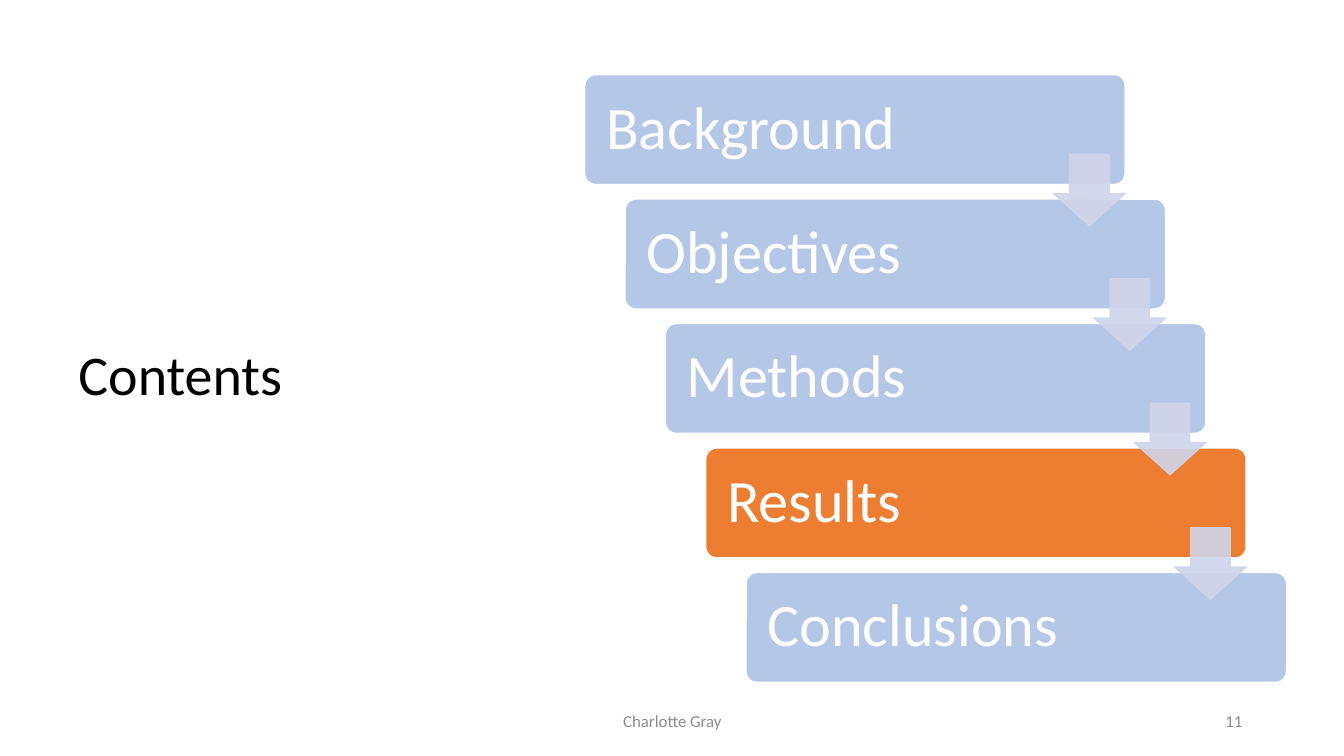
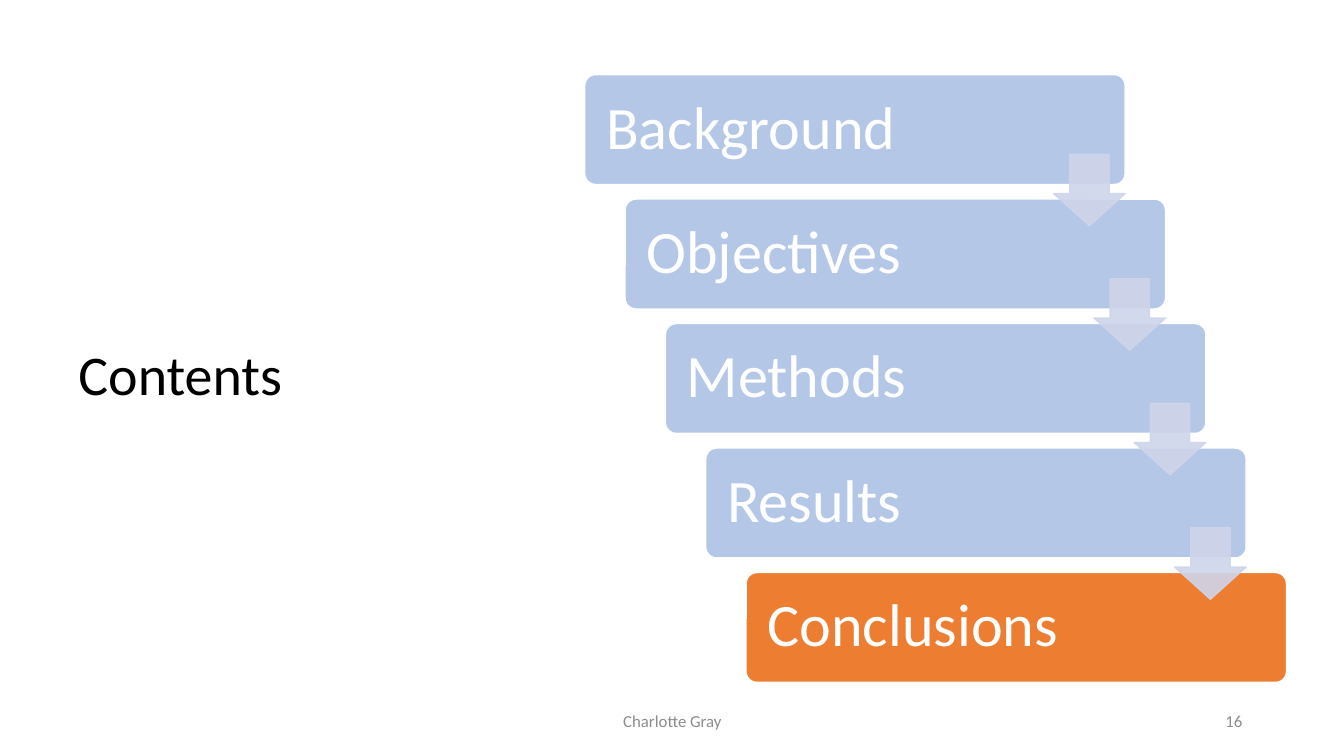
from dataclasses import dataclass

from lxml.etree import SubElement
from pptx import Presentation
from pptx.dml.color import RGBColor
from pptx.enum.shapes import MSO_SHAPE
from pptx.enum.text import MSO_ANCHOR, PP_ALIGN
from pptx.oxml.ns import qn
from pptx.util import Inches, Pt

STEPS = ["Background", "Objectives", "Methods", "Results", "Conclusions"]
SLIDES = [
    {"active": "Results", "number": "11"},
    {"active": "Conclusions", "number": "16"},
]
TITLE = "Contents"
FOOTER = "Charlotte Gray"


@dataclass(frozen=True)
class Theme:
    font: str = "Calibri"
    title: str = "000000"
    step: str = "B4C7E7"
    active: str = "ED7D31"
    arrow: str = "CFD5EA"
    white: str = "FFFFFF"
    footer: str = "8C8C8C"
    title_size: int = 40
    step_size: int = 43
    footer_size: int = 12
    arrow_alpha: int = 90


THEME = Theme()
SLIDE_W, SLIDE_H = 13.33, 7.5
TITLE_BOX = (0.68, 1.27, 3.94, 4.95)
FOOTER_BOX = (4.42, 6.95, 4.5, 0.4)
NUMBER_BOX = (9.42, 6.95, 3, 0.4)
STAIR_LEFT, STAIR_TOP, STAIR_BOTTOM = 5.8, 0.74, 6.77
STEP_W, STEP_H, STEP_INDENT = 5.36, 1.09, 0.4
STEP_INSET = 0.18
ARROW_SIZE, ARROW_DROP = 0.71, 0.79


def write(shape, text, size, color, align=PP_ALIGN.LEFT, spacing=1.0):
    tf = shape.text_frame
    tf.word_wrap = True
    tf.vertical_anchor = MSO_ANCHOR.MIDDLE
    tf.text = text
    p = tf.paragraphs[0]
    p.alignment = align
    p.line_spacing = spacing
    font = p.runs[0].font
    font.name = THEME.font
    font.size = Pt(size)
    font.color.rgb = RGBColor.from_string(color)


def add_text(s, box, *args, **kwargs):
    write(s.shapes.add_textbox(*map(Inches, box)), *args, **kwargs)


def add_block(group, kind, box, adjustments, fill, line):
    sp = group.shapes.add_shape(kind, *map(Inches, box))
    sp.shadow.inherit = False
    for i, value in enumerate(adjustments):
        sp.adjustments[i] = value
    sp.fill.solid()
    sp.fill.fore_color.rgb = RGBColor.from_string(fill)
    sp.line.color.rgb = RGBColor.from_string(line)
    sp.line.width = Pt(1)
    return sp


def add_step(group, text, left, top, fill):
    sp = add_block(group, MSO_SHAPE.ROUNDED_RECTANGLE, (left, top, STEP_W, STEP_H),
                   [0.1], fill, THEME.white)
    tf = sp.text_frame
    tf.margin_left = tf.margin_right = Inches(STEP_INSET)
    tf.margin_top = tf.margin_bottom = Inches(STEP_INSET)
    write(sp, text, THEME.step_size, THEME.white, spacing=0.9)


def add_arrow(group, left, top):
    sp = add_block(group, MSO_SHAPE.DOWN_ARROW, (left, top, ARROW_SIZE, ARROW_SIZE),
                   [0.55, 0.45], THEME.arrow, THEME.arrow)
    for color in sp._element.spPr.iter(qn("a:srgbClr")):
        SubElement(color, qn("a:alpha")).set("val", str(THEME.arrow_alpha * 1000))


def add_staircase(s, active):
    group = s.shapes.add_group_shape()
    pitch = (STAIR_BOTTOM - STAIR_TOP - STEP_H) / (len(STEPS) - 1)
    corners = [(STAIR_LEFT + i * STEP_INDENT, STAIR_TOP + i * pitch)
               for i in range(len(STEPS))]
    for text, (left, top) in zip(STEPS, corners):
        add_step(group, text, left, top, THEME.active if text == active else THEME.step)
    for left, top in corners[:-1]:
        add_arrow(group, left + STEP_W - ARROW_SIZE, top + ARROW_DROP)


def add_contents_slide(prs, active, number):
    s = prs.slides.add_slide(prs.slide_layouts[6])
    add_text(s, TITLE_BOX, TITLE, THEME.title_size, THEME.title, spacing=0.9)
    add_staircase(s, active)
    add_text(s, FOOTER_BOX, FOOTER, THEME.footer_size, THEME.footer, PP_ALIGN.CENTER)
    add_text(s, NUMBER_BOX, number, THEME.footer_size, THEME.footer, PP_ALIGN.RIGHT)


def main():
    prs = Presentation()
    prs.slide_width, prs.slide_height = Inches(SLIDE_W), Inches(SLIDE_H)
    for slide in SLIDES:
        add_contents_slide(prs, **slide)
    prs.save("out.pptx")


if __name__ == "__main__":
    main()
